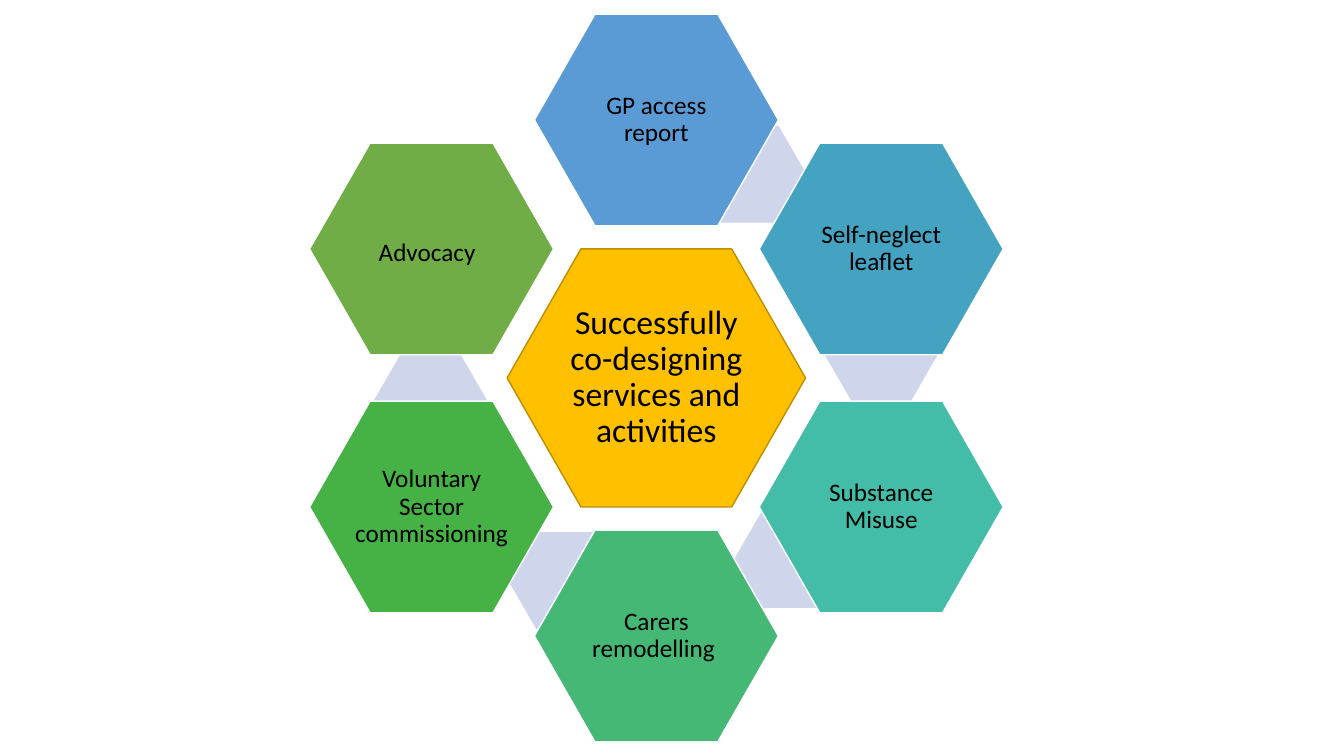
from dataclasses import dataclass
from typing import Optional

from pptx import Presentation
from pptx.dml.color import RGBColor
from pptx.enum.shapes import MSO_SHAPE
from pptx.enum.text import MSO_ANCHOR, PP_ALIGN
from pptx.util import Emu, Pt

HEXAGON = MSO_SHAPE.HEXAGON
MIDDLE = MSO_ANCHOR.MIDDLE
CENTER = PP_ALIGN.CENTER

EMU_PER_PX = 9144  # 100 px to the inch
SLIDE_W, SLIDE_H = 1333, 750
FONT = "Calibri"
INSET = 3

COLORS = {
    "text": "000000",
    "white": "FFFFFF",
    "hub": "FFC000",
    "hub_edge": "BD8E00",
    "link": "CFD5EA",
    "blue": "5B9BD5",
    "cyan": "44A3C0",
    "teal": "43BDA7",
    "mint": "44B874",
    "green": "46B246",
    "olive": "70AD47",
}


@dataclass(frozen=True)
class Box:
    left: int
    top: int
    width: int
    height: int

    def centered(self, width: int, height: int) -> "Box":
        return Box(self.left + (self.width - width) // 2,
                   self.top + (self.height - height) // 2, width, height)


@dataclass(frozen=True)
class Petal:
    label: str
    color: str
    column: int  # steps right of the hub
    row: int     # half steps below the hub
    link_at: Optional[tuple[int, int]] = None
    tail_size: Optional[int] = None  # size of a closing space


HUB = Box(503, 247, 296, 256)
PETAL_W, PETAL_H = 242, 210
LINK_W, LINK_H = 112, 96
MIDDLE_PETAL = Box(530, 270, PETAL_W, PETAL_H)
COLUMN_STEP, HALF_ROW_STEP = 223, 128

PETALS = [
    Petal("GP access report", "blue", 0, -2, (688, 125)),
    Petal("Self-neglect leaflet", "cyan", 1, -1, (818, 304)),
    Petal("Substance Misuse", "teal", 1, 1, (728, 507)),
    Petal("Carers remodelling ", "mint", 0, 2, (504, 528)),
    Petal("Voluntary Sector commissioning ", "green", -1, 1, (371, 349)),
    Petal("Advocacy", "olive", -1, -1, tail_size=28),
]


def px(value: int) -> Emu:
    return Emu(value * EMU_PER_PX)


def rgb(name: str) -> RGBColor:
    return RGBColor.from_string(COLORS[name])


def place(box: Box) -> tuple[Emu, Emu, Emu, Emu]:
    return px(box.left), px(box.top), px(box.width), px(box.height)


def add_hexagon(slide, box: Box, fill: str, edge: Optional[str] = None,
                slant: float = 0.286) -> None:
    hexagon = slide.shapes.add_shape(HEXAGON, *place(box))
    hexagon.adjustments[0] = slant
    hexagon.adjustments[1] = 1.155
    hexagon.shadow.inherit = False
    hexagon.fill.solid()
    hexagon.fill.fore_color.rgb = rgb(fill)
    if edge:
        hexagon.line.color.rgb = rgb(edge)
        hexagon.line.width = Pt(1)
    else:
        hexagon.line.fill.background()


def add_label(slide, box: Box, text: str, *, size: int, color: str = "text",
              tail_size: Optional[int] = None) -> None:
    frame = slide.shapes.add_textbox(*place(box)).text_frame
    frame.word_wrap = True
    frame.vertical_anchor = MIDDLE
    frame.margin_left = frame.margin_right = px(INSET)
    frame.margin_top = frame.margin_bottom = px(INSET)
    paragraph = frame.paragraphs[0]
    paragraph.alignment = CENTER
    paragraph.line_spacing = 0.9
    pieces = [(text, size, color)]
    if tail_size:
        pieces.append((" ", tail_size, "white"))
    for piece, piece_size, piece_color in pieces:
        run = paragraph.add_run()
        run.text = piece
        run.font.name = FONT
        run.font.size = Pt(piece_size)
        run.font.color.rgb = rgb(piece_color)


def add_petal(slide, petal: Petal) -> None:
    if petal.link_at:
        add_hexagon(slide, Box(*petal.link_at, LINK_W, LINK_H), "link", slant=0.289)
    box = Box(MIDDLE_PETAL.left + petal.column * COLUMN_STEP,
              MIDDLE_PETAL.top + petal.row * HALF_ROW_STEP, PETAL_W, PETAL_H)
    add_hexagon(slide, box, petal.color, "white")
    add_label(slide, box.centered(162, 140), petal.label, size=18,
              tail_size=petal.tail_size)


def main() -> None:
    deck = Presentation()
    deck.slide_width, deck.slide_height = px(SLIDE_W), px(SLIDE_H)
    slide = deck.slides.add_slide(deck.slide_layouts[6])

    # Hub
    add_hexagon(slide, HUB, "hub", "hub_edge")
    add_label(slide, HUB.centered(198, 171),
              "Successfully co-designing services and activities", size=24)

    # Ring of petals, each over its link
    for petal in PETALS:
        add_petal(slide, petal)

    deck.save("out.pptx")


if __name__ == "__main__":
    main()
